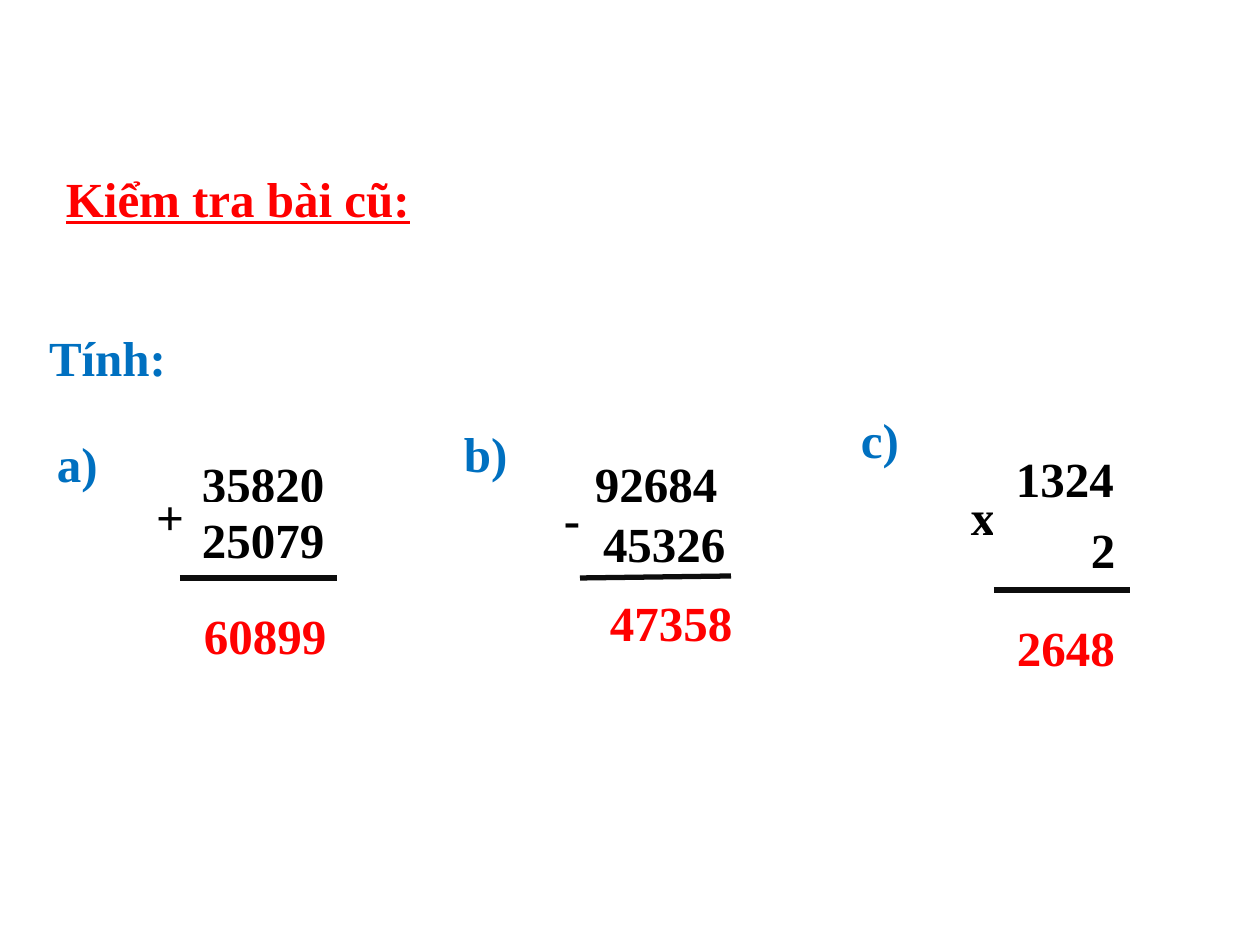
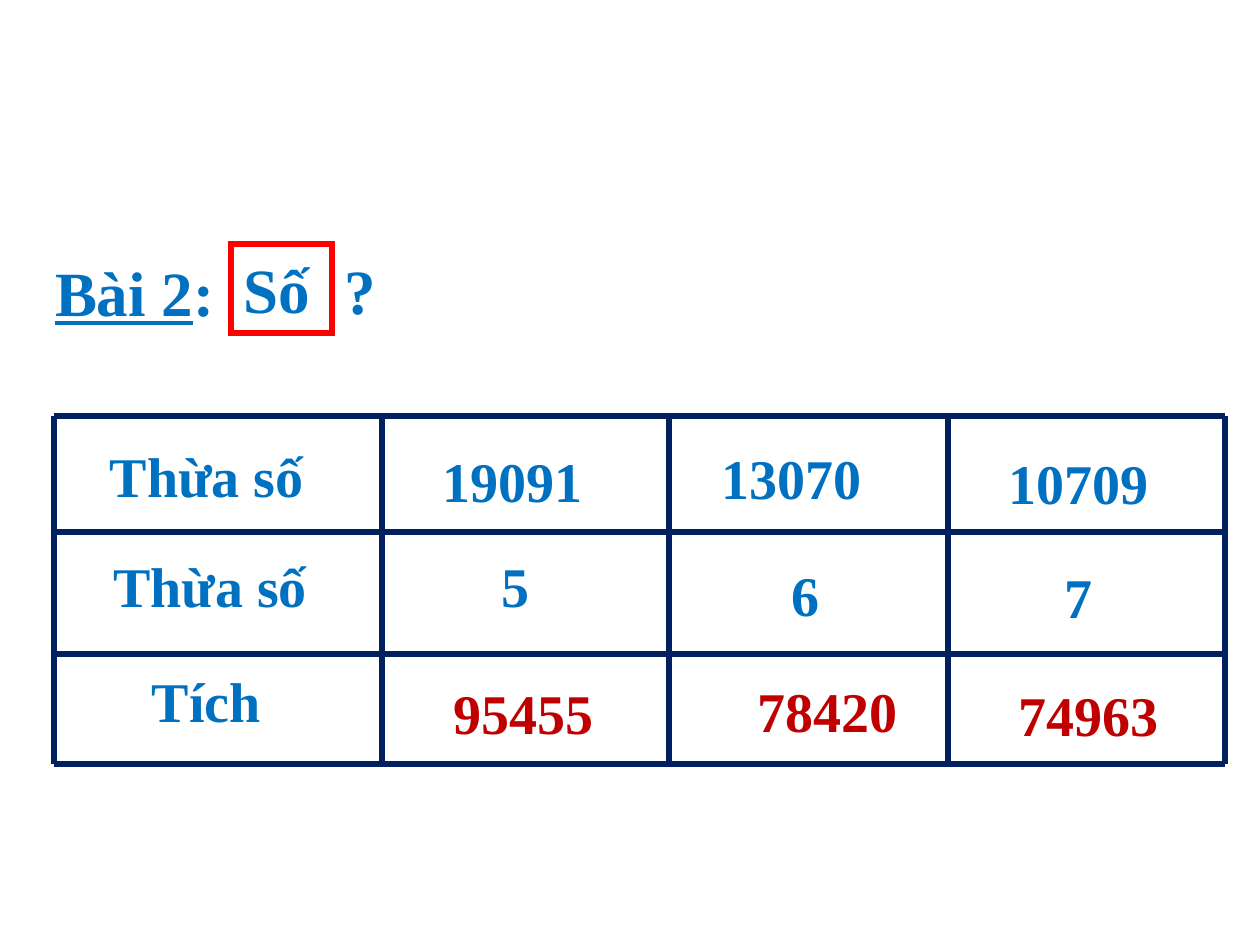
import pptx
import pptx.dml.color
import pptx.enum.shapes
import pptx.enum.text
import pptx.oxml
import pptx.oxml.ns
import pptx.util

EMU_PER_PX = 914400 / 126
FONT = "Times New Roman"
RED, BLUE, BLACK, WHITE = "FF0000", "0070C0", "000000", "FFFFFF"
DARK_RED, NAVY, RULE = "C00000", "002060", "0D0D0D"
INSET = 13


def px(length):
    return pptx.util.Emu(round(length * EMU_PER_PX))


def color(value):
    return pptx.dml.color.RGBColor.from_string(value)


def drawing_element(tag):
    return pptx.oxml.parse_xml(f'<a:{tag} {pptx.oxml.ns.nsdecls("a")}/>')


def write_text(shape, runs, size, text_color, inset=INSET):
    """Fill a shape with one paragraph made of (text, underlined) runs."""
    frame = shape.text_frame
    frame_format = {"word_wrap": True, "margin_left": px(inset),
                    "vertical_anchor": pptx.enum.text.MSO_ANCHOR.TOP}
    for attribute, value in frame_format.items():
        setattr(frame, attribute, value)
    paragraph = frame.paragraphs[0]
    paragraph.alignment = pptx.enum.text.PP_ALIGN.LEFT
    for text, underlined in runs:
        run = paragraph.add_run()
        run.text = text
        font_format = {"name": FONT, "size": pptx.util.Pt(size), "bold": True,
                       "underline": underlined}
        for attribute, value in font_format.items():
            setattr(run.font, attribute, value)
        run.font.color.rgb = color(text_color)


def add_text(slide, box, runs, size, text_color):
    shape = slide.shapes.add_textbox(*map(px, box))
    write_text(shape, runs, size, text_color)


def add_framed_text(slide, box, text, size, text_color,
                    frame_color=WHITE, frame_width=0.75, inset=INSET):
    shape = slide.shapes.add_shape(
        pptx.enum.shapes.MSO_SHAPE.RECTANGLE, *map(px, box))
    shape.shadow.inherit = False
    shape.fill.background()
    shape.line.color.rgb = color(frame_color)
    shape.line.width = pptx.util.Pt(frame_width)
    # Square corners
    outline = shape._element.spPr.find(pptx.oxml.ns.qn("a:ln"))
    outline.append(drawing_element("miter"))
    write_text(shape, [(text, False)], size, text_color, inset)


def add_line(slide, start, end, line_color):
    line = slide.shapes.add_connector(
        pptx.enum.shapes.MSO_CONNECTOR.STRAIGHT, *map(px, start + end))
    line.line.color.rgb = color(line_color)
    line.line.width = pptx.util.Pt(3)
    properties = line._element.find(pptx.oxml.ns.qn("p:spPr"))
    properties.append(drawing_element("effectLst"))


# Column sums: each part is (text, left, top, width), relative to the sum's corner
SUMS = [
    {"corner": (44, 427), "label": "a)",
     "sign": ("+", 99, 53, 58),
     "first": ("35820", 145, 20, 199),
     "second": ("25079", 145, 76, 199),
     "result": ("60899", 147, 172, 199),
     "rule": ((136, 151), (293, 151))},
    {"corner": (451, 417), "label": "b)",
     "sign": ("-", 100, 65, 42),
     "first": ("92684", 131, 30, 266),
     "second": ("45326", 139, 90, 231),
     "result": ("47358", 146, 169, 199),
     "rule": ((129, 161), (280, 159))},
    {"corner": (848, 403), "label": "c)",
     "sign": ("x", 110, 77, 47),
     "first": ("1324", 155, 39, 199),
     "second": ("2", 146, 110, 198),
     "result": ("2648", 156, 208, 199),
     "rule": ((146, 187), (282, 187))},
]


def add_sum(slide, column_sum):
    left, top = column_sum["corner"]
    add_framed_text(slide, (left, top, 100, 72), column_sum["label"], 28, BLUE)
    for part in ("sign", "first", "second", "result"):
        text, x, y, width = column_sum[part]
        # A one-digit operand stands under the units
        is_single_digit = len(text) == 1 and text.isdigit()
        add_framed_text(slide, (left + x, top + y, width, 72), text, 28,
                        RED if part == "result" else BLACK,
                        inset=97 if is_single_digit else INSET)
    start, end = [(left + x, top + y) for x, y in column_sum["rule"]]
    add_line(slide, start, end, RULE)


def build_review_slide(slide):
    add_text(slide, (53, 162, 480, 72), [("Kiểm tra bài cũ:", True)], 28, RED)
    add_framed_text(slide, (25, 321, 181, 72), "Tính:", 28, BLUE, inset=24)
    for column_sum in SUMS:
        add_sum(slide, column_sum)


# Factor grid: edges and cell texts are relative to the grid's corner
COLUMN_EDGES = (0, 328, 615, 894, 1171)
ROW_EDGES = (0, 116, 238, 348)
GRID_ROWS = [
    [("Thừa số", 43, 19, 305), ("19091", 376, 24, 199),
     ("13070", 655, 21, 176), ("10709", 941, 26, 210)],
    [("Thừa số", 46, 129, 271), ("5", 435, 129, 64),
     ("6", 725, 138, 64), ("7", 997, 140, 95)],
    [("Tích", 85, 244, 145), ("95455", 386, 256, 210),
     ("78420", 691, 254, 210), ("74963", 951, 258, 210)],
]


def add_factor_grid(slide, left, top):
    right, bottom = left + COLUMN_EDGES[-1], top + ROW_EDGES[-1]
    for x in COLUMN_EDGES:
        add_line(slide, (left + x, top), (left + x, bottom), NAVY)
    for y in ROW_EDGES:
        add_line(slide, (left, top + y), (right, top + y), NAVY)
    for row in GRID_ROWS:
        for text, x, y, width in row:
            is_product = row is GRID_ROWS[-1] and text.isdigit()
            add_text(slide, (left + x, top + y, width, 80), [(text, False)],
                     32, DARK_RED if is_product else BLUE)


def add_exercise_heading(slide, left, top):
    add_text(slide, (left, top + 3, 231, 88),
             [("Bài 2", True), (":", False)], 36, BLUE)
    # Framed word
    add_framed_text(slide, (left + 189, top, 101, 89), "Số", 36, BLUE, RED, 3)
    add_text(slide, (left + 290, top + 1, 63, 88), [("?", False)], 36, BLUE)


def build_exercise_slide(slide):
    add_exercise_heading(slide, 42, 244)
    add_factor_grid(slide, 54, 416)


def main():
    presentation = pptx.Presentation()
    presentation.slide_width, presentation.slide_height = px(1260), px(945)
    blank = presentation.slide_layouts[6]
    for build in (build_review_slide, build_exercise_slide):
        build(presentation.slides.add_slide(blank))
    presentation.save("out.pptx")


if __name__ == "__main__":
    main()
